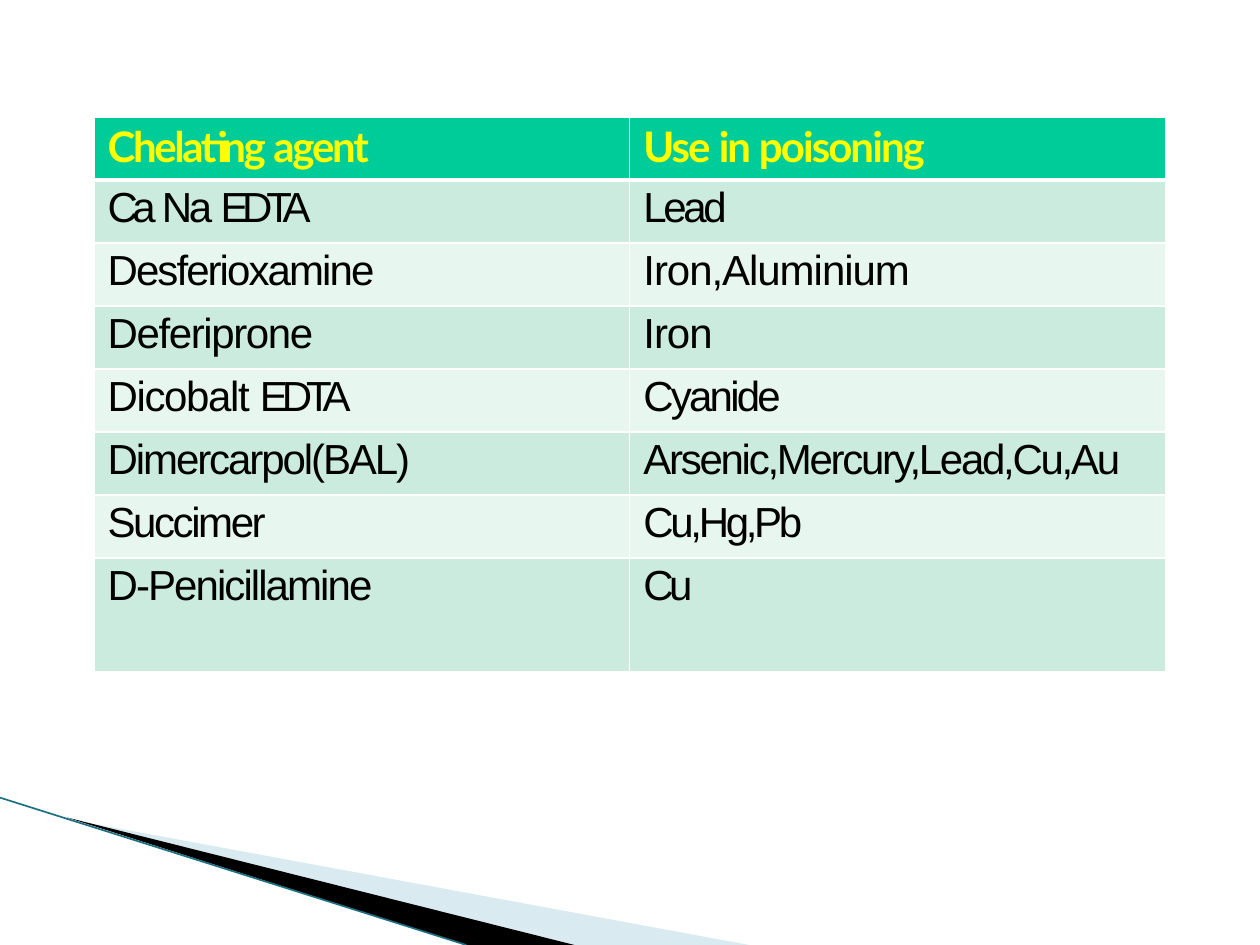
from dataclasses import dataclass

from lxml import etree
from pptx import Presentation
from pptx import util as u
from pptx.dml import color
from pptx.enum import shapes
from pptx.oxml import ns


@dataclass(frozen=True)
class Theme:
    header: str = "00CC99"
    header_text: str = "FFFF00"
    bands: tuple = ("CAEBDE", "E7F6EE")
    body_text: str = "000000"
    border: str = "FFFFFF"
    wedge_pale: str = "A0CBDC"
    wedge_dark: str = "000000"
    edge: str = "1D7083"
    header_font: str = "Lato"
    body_font: str = "Arial"
    text_size: float = 24
    border_width: float = 1
    header_rule: float = 3
    edge_width: float = 0.95


ROWS = [
    ([("Chelating ", -1.4), ("agent", -1.3)], [("Use ", -1.1), ("in ", -1.3), ("poisoning", -1.1)]),
    ([("Ca ", -3.2), ("Na ", -1.9), ("EDTA", -3.6)], [("Lead", -1.9)]),
    ([("Desferioxamine", -1.1)], [("Iron,Aluminium", -0.6)]),
    ([("Deferiprone", -0.8)], [("Iron", -0.6)]),
    ([("Dicobalt ", -0.8), ("EDTA", -3.5)], [("Cyanide", -1.6)]),
    ([("Dimercarpol(BAL)", -1.2)], [("Arsenic,Mercury,Lead,Cu,Au", -1.3)]),
    ([("Succimer", -1.4)], [("Cu,Hg,Pb", -1.9)]),
    ([("D-Penicillamine", -1.1)], [("Cu", -2.6)]),
]


def rgb(value):
    return color.RGBColor.from_string(value)


def apply(target, values):
    for name, value in values.items():
        setattr(target, name, value)


def add_element(parent, tag, **attributes):
    return etree.SubElement(parent, ns.qn(tag), attributes)


class SlideBuilder:
    """Draws styled elements on the current slide."""

    def __init__(self, slide, theme):
        self.slide = slide
        self.theme = theme

    def wedge(self, points, fill, opacity=100):
        corners = [(u.Cm(x), u.Cm(y)) for x, y in points]
        builder = self.slide.shapes.build_freeform(*corners[0])
        builder.add_line_segments(corners[1:], close=True)
        shape = builder.convert_to_shape()
        shape.shadow.inherit = False
        shape.fill.solid()
        shape.fill.fore_color.rgb = rgb(fill)
        shape.line.fill.background()
        if opacity < 100:
            solid = shape.fill.fore_color._xFill
            add_element(solid[0], "a:alpha", val=str(opacity * 1000))

    def line(self, start, end):
        ends = [u.Cm(value) for value in (*start, *end)]
        connector = self.slide.shapes.add_connector(shapes.MSO_CONNECTOR.STRAIGHT, *ends)
        connector.line.width = u.Pt(self.theme.edge_width)
        connector.line.color.rgb = rgb(self.theme.edge)
        add_element(connector._element.spPr, "a:effectLst")

    def borders(self, cell, widths):
        properties = cell._tc.get_or_add_tcPr()
        for index, (side, width) in enumerate(widths.items()):
            border = etree.Element(ns.qn(f"a:ln{side}"), w=str(u.Pt(width)))
            solid = add_element(border, "a:solidFill")
            add_element(solid, "a:srgbClr", val=self.theme.border)
            properties.insert(index, border)

    def cell(self, cell, runs, row):
        theme = self.theme
        header = row == 0
        apply(cell, {"margin_left": u.Cm(0.28), "margin_top": u.Cm(0.08),
                     "margin_right": 0, "margin_bottom": 0})
        cell.fill.solid()
        cell.fill.fore_color.rgb = rgb(theme.header if header else theme.bands[(row - 1) % 2])
        paragraph = cell.text_frame.paragraphs[0]
        for wording, spacing in runs:
            run = paragraph.add_run()
            run.text = wording
            apply(run.font, {"size": u.Pt(theme.text_size), "bold": header,
                             "name": theme.header_font if header else theme.body_font})
            run.font.color.rgb = rgb(theme.header_text if header else theme.body_text)
            run.font._element.set("spc", str(round(spacing * 100)))
        thin, thick = theme.border_width, theme.header_rule
        self.borders(cell, {"L": thin, "R": thin, "T": thick if row == 1 else thin,
                            "B": thick if header else thin})

    def table(self, rows, left, top, column_width, heights):
        columns = len(rows[0])
        frame = self.slide.shapes.add_table(
            len(rows), columns, u.Cm(left), u.Cm(top),
            u.Cm(column_width * columns), u.Cm(sum(heights)))
        for column in frame.table.columns:
            column.width = u.Cm(column_width)
        for row, (cells, height) in enumerate(zip(rows, heights)):
            frame.table.rows[row].height = u.Cm(height)
            for column, runs in enumerate(cells):
                self.cell(frame.table.cell(row, column), runs, row)


def main():
    presentation = Presentation()
    apply(presentation, {"slide_width": u.Cm(25.4), "slide_height": u.Cm(19.05)})
    slide = presentation.slides.add_slide(presentation.slide_layouts[6])
    theme = Theme()
    builder = SlideBuilder(slide, theme)
    builder.wedge([(1.4, 16.52), (15.1, 19.05), (11.58, 19.05)], theme.wedge_pale, opacity=40)
    builder.wedge([(1.35, 16.48), (11.58, 19.05), (9.4, 19.05)], theme.wedge_dark)
    builder.line((0, 16.08), (9.4, 19.05))
    builder.table(ROWS, 1.89, 2.36, 10.8, [1.27] * 7 + [2.29])
    presentation.save("out.pptx")


if __name__ == "__main__":
    main()
